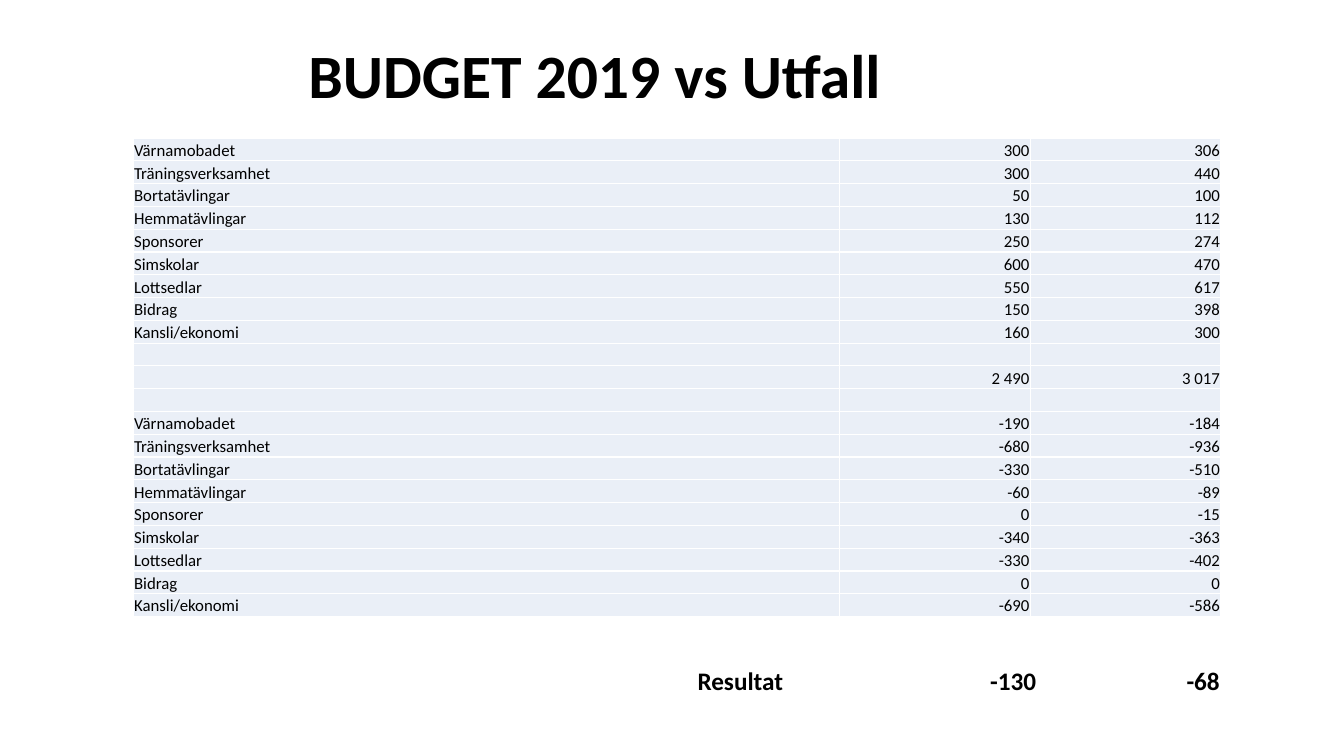
import lxml.etree
import pptx
import pptx.dml.color
import pptx.enum.text
import pptx.oxml.ns
import pptx.util

Inches = pptx.util.Inches
qn = pptx.oxml.ns.qn
ALIGN = pptx.enum.text.PP_ALIGN
ANCHOR = pptx.enum.text.MSO_ANCHOR


def color(value):
    return pptx.dml.color.RGBColor.from_string(value)


def set_font(p, size, bold=False):
    p.font.name = "Calibri"
    p.font.size = pptx.util.Pt(size)
    p.font.bold = bold
    p.font.color.rgb = color("000000")


prs = pptx.Presentation()
prs.slide_width, prs.slide_height = Inches(13.33), Inches(7.5)
s = prs.slides.add_slide(prs.slide_layouts[6])

# Title, indented from the left edge of its box
sp = s.shapes.add_textbox(Inches(0.92), Inches(0.4), Inches(11.5), Inches(0.95))
tf = sp.text_frame
tf.word_wrap = True
p = tf.paragraphs[0]
p.text = "BUDGET 2019 vs Utfall"
p.line_spacing = 0.9
p._p.get_or_add_pPr().set("marL", str(Inches(2.04)))
set_font(p, 44, True)

# Result line, with the sums on right-aligned tab stops
sp = s.shapes.add_textbox(Inches(6.82), Inches(6.55), Inches(5.44), Inches(0.4))
tf = sp.text_frame
tf.word_wrap = True
p = tf.paragraphs[0]
p.text = "Resultat\t-130\t-68"
tabs = lxml.etree.SubElement(p._p.get_or_add_pPr(), qn("a:tabLst"))
for stop in (3.36, 5.18):
    lxml.etree.SubElement(tabs, qn("a:tab"), pos=str(Inches(stop)), algn="r")
set_font(p, 18, True)

# Income and expenses: post, budget, outcome
rows = [
    ("Värnamobadet", "300", "306"),
    ("Träningsverksamhet", "300", "440"),
    ("Bortatävlingar", "50", "100"),
    ("Hemmatävlingar", "130", "112"),
    ("Sponsorer", "250", "274"),
    ("Simskolar", "600", "470"),
    ("Lottsedlar", "550", "617"),
    ("Bidrag", "150", "398"),
    ("Kansli/ekonomi", "160", "300"),
    ("", "", ""),
    ("", "2 490", "3 017"),
    ("", "", ""),
    ("Värnamobadet", "-190", "-184"),
    ("Träningsverksamhet", "-680", "-936"),
    ("Bortatävlingar", "-330", "-510"),
    ("Hemmatävlingar", "-60", "-89"),
    ("Sponsorer", "0", "-15"),
    ("Simskolar", "-340", "-363"),
    ("Lottsedlar", "-330", "-402"),
    ("Bidrag", "0", "0"),
    ("Kansli/ekonomi", "-690", "-586"),
]
table = s.shapes.add_table(len(rows), 3, Inches(1.32), Inches(1.37),
                           Inches(10.79), Inches(4.76)).table
table.first_row = False
table.horz_banding = False
for column, width in zip(table.columns, (7.01, 1.89, 1.89)):
    column.width = Inches(width)

for i, row in enumerate(rows):
    table.rows[i].height = Inches(4.75 / len(rows))
    for j, text in enumerate(row):
        cell = table.cell(i, j)
        cell.margin_left = cell.margin_right = cell.margin_top = Inches(0.01)
        cell.margin_bottom = 0
        cell.vertical_anchor = ANCHOR.BOTTOM
        p = cell.text_frame.paragraphs[0]
        p.alignment = ALIGN.RIGHT if j else ALIGN.LEFT
        set_font(p, 12)
        if text:
            p.text = text
        else:
            # Keeps empty rows as low as the others
            lxml.etree.SubElement(p._p, qn("a:endParaRPr"), sz="1200")

        # White cell borders come before the fill
        tcPr = cell._tc.get_or_add_tcPr()
        for side in ("a:lnL", "a:lnR", "a:lnT", "a:lnB"):
            ln = lxml.etree.SubElement(tcPr, qn(side), w=str(pptx.util.Pt(1)))
            fill = lxml.etree.SubElement(ln, qn("a:solidFill"))
            lxml.etree.SubElement(fill, qn("a:srgbClr"), val="FFFFFF")
        cell.fill.solid()
        cell.fill.fore_color.rgb = color("EAEFF7")

prs.save("out.pptx")
